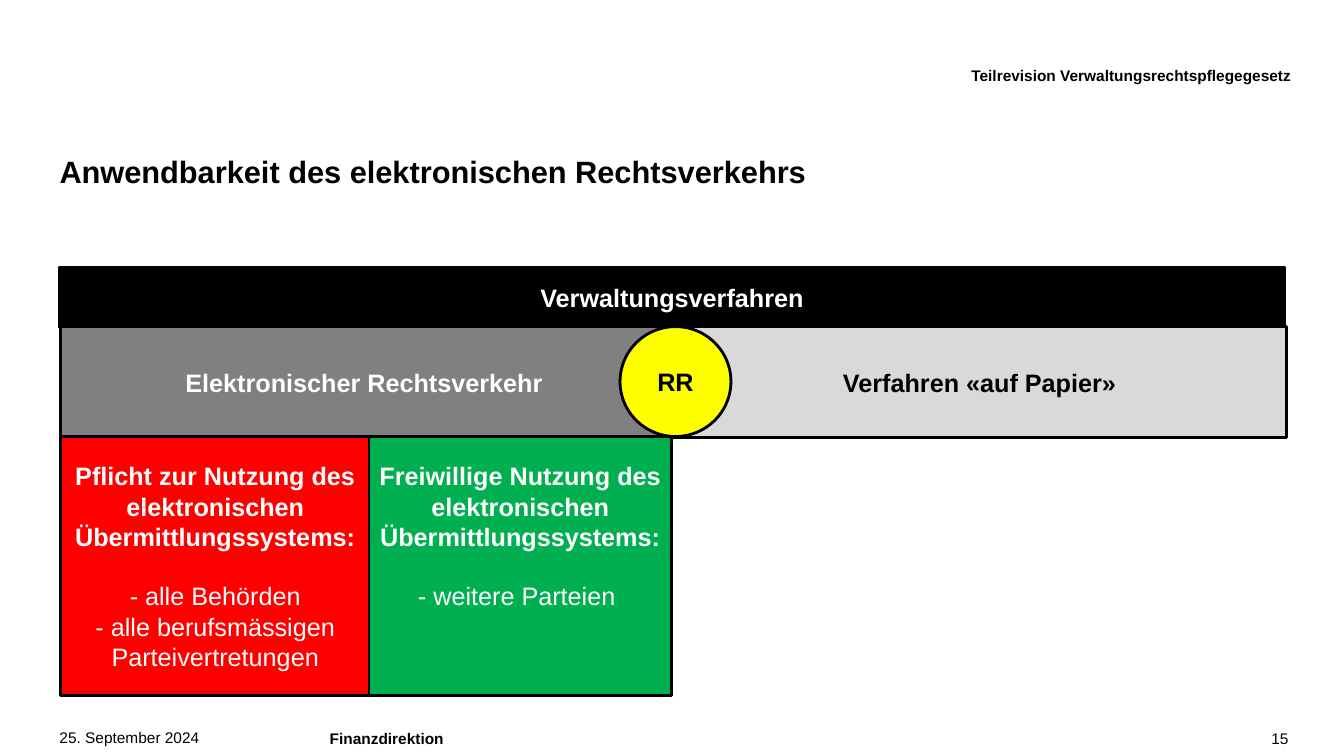
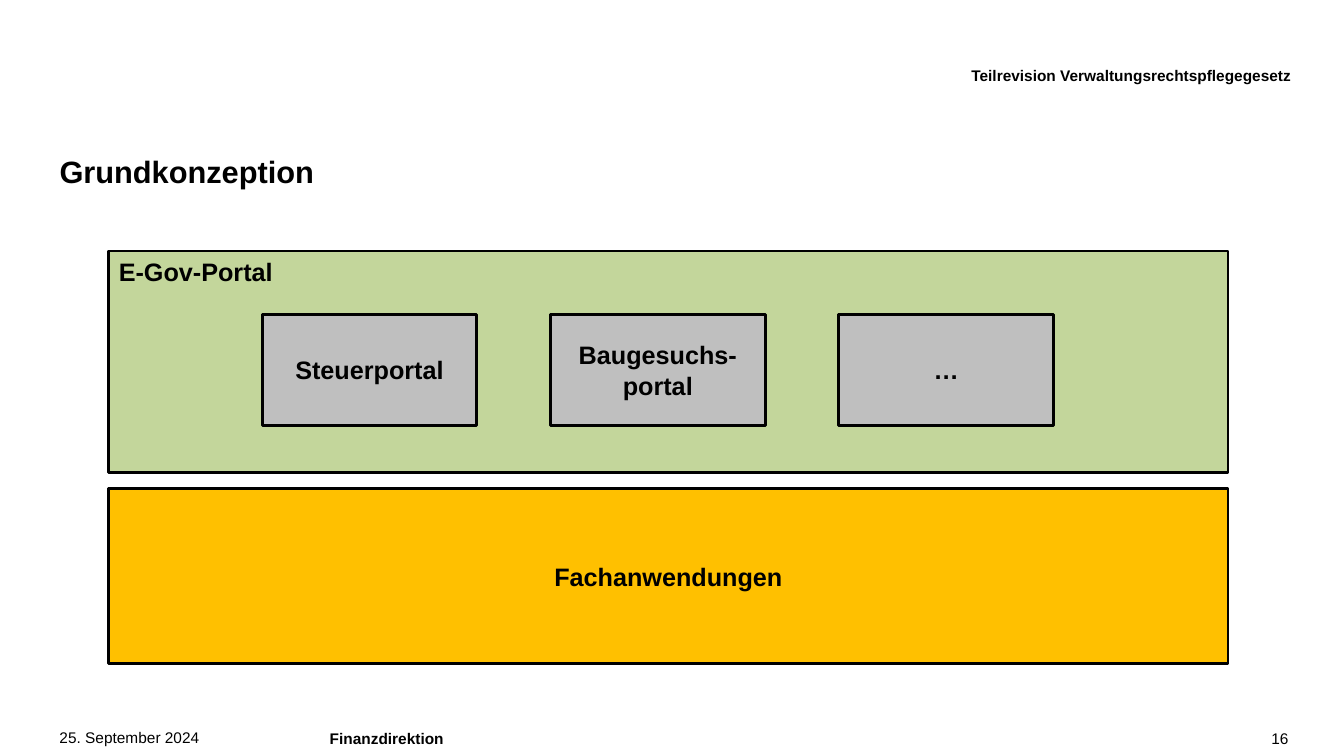
from pptx import Presentation
from pptx.dml.color import RGBColor
from pptx.enum.shapes import MSO_SHAPE as Form
from pptx.enum.text import MSO_ANCHOR as Anchor, MSO_AUTO_SIZE as Auto, PP_ALIGN as Align
from pptx.util import Emu, Pt

SCALE = 9144  # EMU per px, 100 px to the inch
FONT = "Arial"
BLACK, WHITE = "000000", "FFFFFF"
DARK, LIGHT, GREY = "808080", "D9D9D9", "BFBFBF"
RED, GREEN, YELLOW = "FF0000", "00B050", "FFFF00"
SAGE, AMBER = "C3D69B", "FFC000"

HEAD = "Teilrevision Verwaltungsrechtspflegegesetz"
DATE, UNIT = "25. September 2024", "Finanzdirektion"


def px(num):
    return Emu(num * SCALE)


def hue(code):
    return RGBColor.from_string(code)


def put(obj, vals):
    for name, val in vals.items():
        setattr(obj, name, val)


def place(shape, box):
    put(shape, dict(zip(("left", "top", "width", "height"), map(px, box))))


def style(para, size, color, bold, align, lead=None):
    put(para, {"alignment": align, "line_spacing": lead})
    put(para.font, {"name": FONT, "size": Pt(size), "bold": bold})
    para.font.color.rgb = hue(color)


# Plain text without margins
def label(shape, text, size=11, bold=False, align=Align.LEFT, lead=12, anchor=Anchor.TOP):
    frame = shape.text_frame
    put(frame, {"word_wrap": True, "auto_size": Auto.NONE, "vertical_anchor": anchor,
                "margin_left": 0, "margin_top": 0, "margin_right": 0, "margin_bottom": 0})
    frame.text = text
    style(frame.paragraphs[0], size, BLACK, bold, align, lead and Pt(lead))


def note(slide, box, text, **look):
    label(slide.shapes.add_textbox(*map(px, box)), text, **look)


# Outlined block: bold heading, then plain items set off by one line
def block(slide, box, fill, text, color=BLACK, items=(), form=Form.RECTANGLE,
          align=Align.CENTER, anchor=Anchor.MIDDLE, inset=5):
    shape = slide.shapes.add_shape(form, *map(px, box))
    shape.shadow.inherit = False
    shape.fill.solid()
    shape.fill.fore_color.rgb = hue(fill)
    shape.line.color.rgb = hue(BLACK)
    shape.line.width = Pt(2)
    frame = shape.text_frame
    put(frame, {"word_wrap": True, "vertical_anchor": anchor, "margin_top": px(inset)})
    frame.text = "\n".join((text, *items))
    for num, para in enumerate(frame.paragraphs):
        style(para, 18, color, num == 0, align)
        if num == 1:
            para.space_before = Pt(21)


# Title, header and footer of every slide
def start(deck, title, page):
    slide = deck.slides.add_slide(deck.slide_layouts[5])
    place(slide.shapes.title, (59, 157, 1217, 31))
    label(slide.shapes.title, title, size=22, bold=True, lead=22, anchor=Anchor.MIDDLE)
    note(slide, (231, 67, 1050, 18), HEAD, bold=True, align=Align.RIGHT)
    note(slide, (59, 724, 210, 18), DATE)
    note(slide, (327, 725, 833, 17), UNIT, bold=True)
    note(slide, (1247, 723, 31, 19), str(page), align=Align.RIGHT, lead=None)
    return slide


def scope(deck):
    slide = start(deck, "Anwendbarkeit des elektronischen Rechtsverkehrs", 15)
    block(slide, (59, 265, 1215, 60), BLACK, "Verwaltungsverfahren", WHITE)
    # Two kinds of procedure
    block(slide, (60, 324, 609, 110), DARK, "Elektronischer Rechtsverkehr ", WHITE)
    block(slide, (667, 324, 609, 110), LIGHT, "Verfahren «auf Papier»")
    # Duty and choice
    tail = "Nutzung des elektronischen Übermittlungssystems:"
    duty = ("- alle Behörden", "- alle berufsmässigen Parteivertretungen")
    for left, width, fill, lead, items in (
            (60, 307, RED, "Pflicht zur", duty),
            (366, 300, GREEN, "Freiwillige", ("- weitere Parteien ",))):
        block(slide, (left, 433, width, 257), fill, f"{lead} {tail}", WHITE, items,
              anchor=Anchor.TOP, inset=24)
    block(slide, (615, 324, 110, 109), YELLOW, "RR", form=Form.FLOWCHART_CONNECTOR)


def concept(deck):
    slide = start(deck, "Grundkonzeption", 16)
    block(slide, (108, 249, 1110, 220), SAGE, "E-Gov-Portal",
          align=Align.LEFT, anchor=Anchor.TOP)
    # Portals in equal steps
    for num, name in enumerate(("Steuerportal", "Baugesuchs-portal", "…")):
        block(slide, (260 + 286 * num, 312, 213, 110), GREY, name)
    block(slide, (108, 485, 1110, 173), AMBER, "Fachanwendungen")


def main():
    deck = Presentation()
    put(deck, {"slide_width": px(1333), "slide_height": px(750)})
    scope(deck)
    concept(deck)
    deck.save("out.pptx")


if __name__ == "__main__":
    main()
